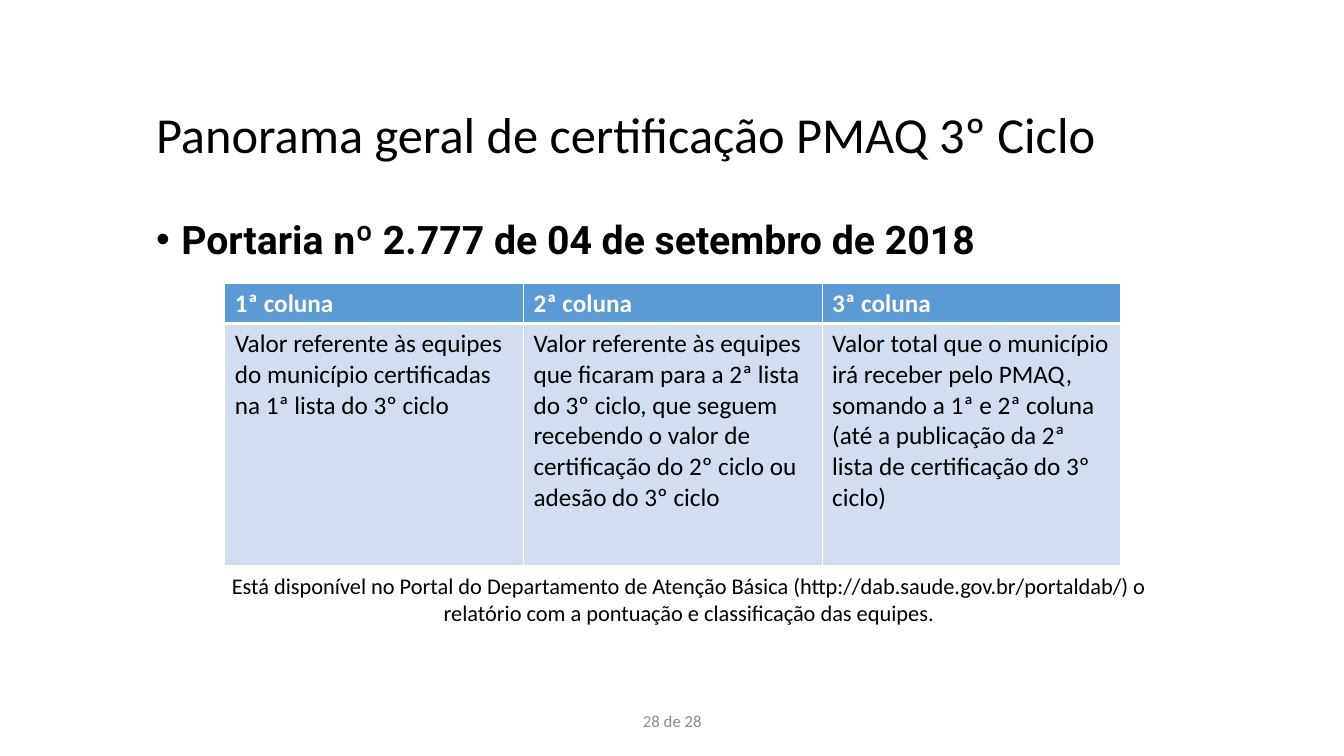
from pptx import Presentation
from pptx.dml.color import RGBColor
from pptx.enum.text import MSO_ANCHOR as Anchor, PP_ALIGN as Align
from pptx.oxml.ns import qn
from pptx.oxml.xmlchemy import OxmlElement as Element
from pptx.util import Inches, Pt

COLORS = {
    "ink": "000000",
    "white": "FFFFFF",
    "header": "5B9BD5",
    "cell": "D2DEEF",
    "page_number": "8C8C8C",
}
WIDTH, HEIGHT = Inches(13.33), Inches(7.5)
COLUMNS, ROWS = 40, 30

COLUMN_GUIDE = [
    ("1ª coluna",
     "Valor referente às equipes do município certificadas na 1ª lista do 3º ciclo"),
    ("2ª coluna",
     "Valor referente às equipes que ficaram para a 2ª lista do 3º ciclo, que seguem "
     "recebendo o valor de certificação do 2º ciclo ou adesão do 3º ciclo"),
    ("3ª coluna",
     "Valor total que o município irá receber pelo PMAQ, somando a 1ª e 2ª coluna "
     "(até a publicação da 2ª lista de certificação do 3º ciclo)"),
]


def color(name):
    return RGBColor.from_string(COLORS[name])


def across(columns):
    return round(WIDTH * columns / COLUMNS)


def down(rows):
    return round(HEIGHT * rows / ROWS)


def write(frame, text, size=18, font="Calibri", ink="ink", bold=False,
          align=Align.LEFT, spacing=None, bullet=None):
    """Fill a text frame with one formatted paragraph."""
    frame.word_wrap = True
    para = frame.paragraphs[0]
    if bullet:
        properties = para._p.get_or_add_pPr()
        properties.set("marL", str(Inches(0.25)))
        properties.set("indent", str(-Inches(0.25)))
        for tag, name, value in (("a:buFont", "typeface", "Arial"),
                                 ("a:buChar", "char", bullet)):
            mark = Element(tag)
            mark.set(name, value)
            properties.append(mark)
    para.alignment = align
    if spacing:
        para.line_spacing = spacing
    span = para.add_run()
    span.text = text
    span.font.size, span.font.name, span.font.bold = Pt(size), font, bold
    span.font.color.rgb = color(ink)


def set_borders(cell, top, bottom):
    """Draw white cell borders; widths are in points, the sides are thin."""
    properties = cell._tc.get_or_add_tcPr()
    edges = (("L", 1), ("R", 1), ("T", top), ("B", bottom))
    for position, (side, width) in enumerate(edges):
        line, fill, tone = (Element(f"a:ln{side}"), Element("a:solidFill"),
                            Element("a:srgbClr"))
        line.set("w", str(Pt(width)))
        tone.set("val", COLORS["white"])
        fill.append(tone)
        line.append(fill)
        properties.insert(position, line)


class SlideBuilder:
    """Places elements on a page by grid columns and rows."""

    def __init__(self, page):
        self.page = page

    def text(self, text, left, top, width, height, anchor=Anchor.TOP, **style):
        box = self.page.shapes.add_textbox(
            across(left), down(top), across(width), down(height))
        box.text_frame.vertical_anchor = anchor
        write(box.text_frame, text, **style)

    def table(self, entries, left, top, width, row_heights):
        """Add a table with one column per (heading, description) entry."""
        table = self.page.shapes.add_table(
            len(row_heights), len(entries), across(left), down(top),
            across(width), down(sum(row_heights))).table
        table._tbl.tblPr.find(qn("a:tableStyleId")).text = (
            "{2D5ABB26-0587-4C30-8999-92F81FD0307C}")
        table.horz_banding = False
        for row, height in zip(table.rows, row_heights):
            row.height = down(height)
        for index, entry in enumerate(entries):
            table.columns[index].width = across(width / len(entries))
            for level, text in enumerate(entry):
                heading = level == 0
                cell = table.cell(level, index)
                write(cell.text_frame, text, bold=heading,
                      ink="white" if heading else "ink")
                cell.fill.solid()
                cell.fill.fore_color.rgb = color("header" if heading else "cell")
                set_borders(cell, *((1, 3) if heading else (3, 1)))


def main():
    deck = Presentation()
    deck.slide_width, deck.slide_height = WIDTH, HEIGHT
    slide = SlideBuilder(deck.slides.add_slide(deck.slide_layouts[6]))

    slide.text("Panorama geral de certificação PMAQ 3º Ciclo",
               4.35, 2.6, 31.5, 5.72, anchor=Anchor.MIDDLE, size=36, spacing=0.9)
    slide.text("Portaria nº 2.777 de 04 de setembro de 2018",
               4.35, 8.56, 31.5, 14.52, size=28, font="Roboto", bold=True,
               align=Align.JUSTIFY, spacing=0.9, bullet="•")
    slide.table(COLUMN_GUIDE, 6.69, 11.24, 26.67, (1.6, 9.6))
    slide.text("Está disponível no Portal do Departamento de Atenção Básica "
               "(http://dab.saude.gov.br/portaldab/) o relatório com a pontuação "
               "e classificação das equipes.",
               6.06, 22.52, 28.89, 2.56, size=16, align=Align.CENTER)
    slide.text("28 de 28", 13.26, 27.8, 13.5, 1.6, anchor=Anchor.MIDDLE,
               size=12, ink="page_number", align=Align.CENTER)

    deck.save("out.pptx")


if __name__ == "__main__":
    main()
